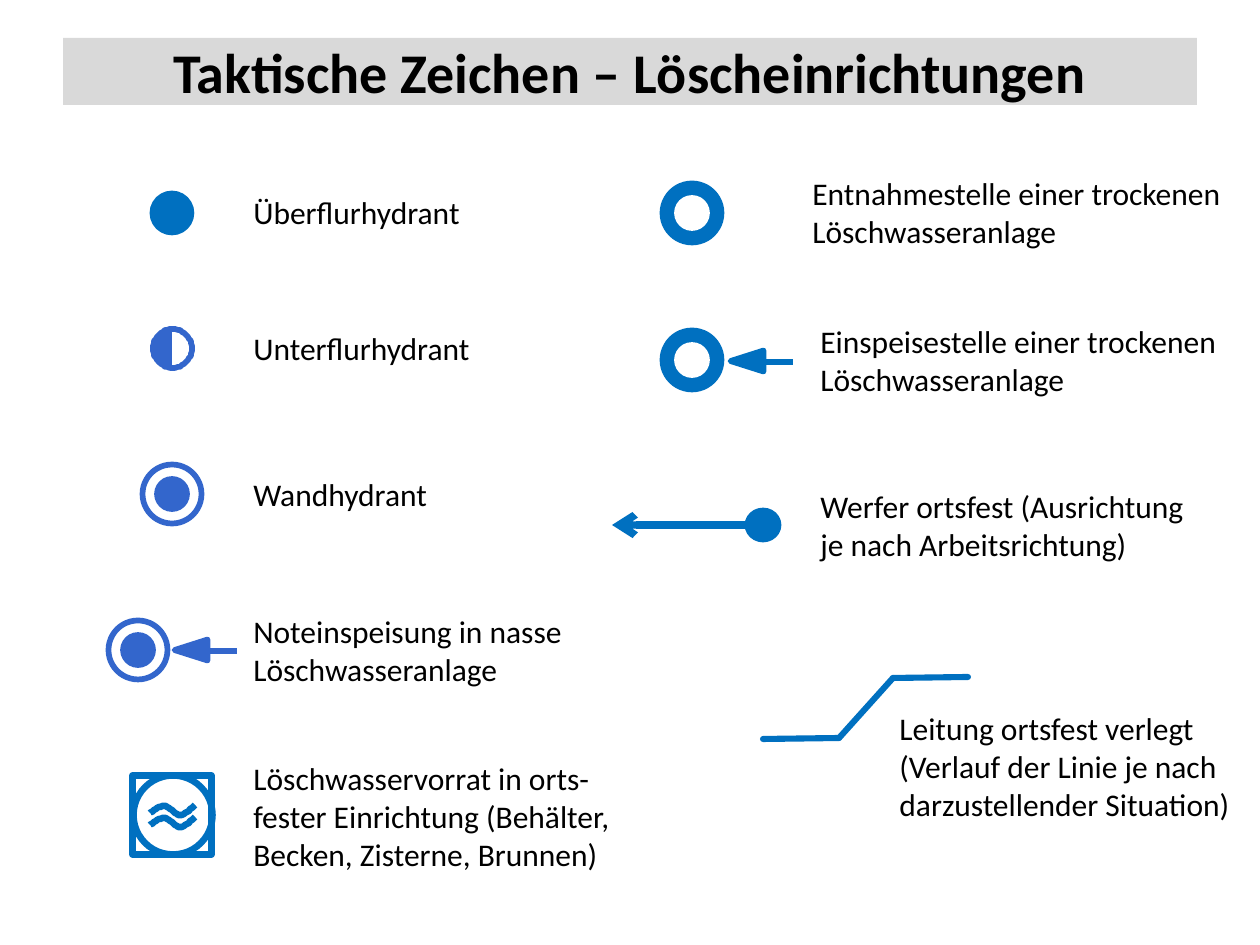
import math
from typing import NamedTuple

from lxml import etree
from pptx import Presentation
from pptx import util as u
from pptx.dml.color import RGBColor
from pptx.enum import shapes, text
from pptx.oxml import ns

SCALE = u.Inches(1) / 126  # EMU per px
HUES = {"sky": "0070C0", "royal": "3366CC", "white": "FFFFFF",
        "grey": "D9D9D9", "black": "000000"}
KIND = shapes.MSO_SHAPE


class Label(NamedTuple):
    words: str
    left: int
    top: int
    width: int


LABELS = [
    Label("Überflurhydrant", 241, 187, 234),
    Label("Unterflurhydrant", 241, 323, 244),
    Label("Wandhydrant", 241, 469, 202),
    Label("Noteinspeisung in nasse\nLöschwasseranlage", 241, 606, 338),
    Label("Löschwasservorrat in orts-\nfester Einrichtung (Behälter,\n"
          "Becken, Zisterne, Brunnen)", 241, 753, 386),
    Label("Entnahmestelle einer trockenen\nLöschwasseranlage", 800, 168, 438),
    Label("Einspeisestelle einer trockenen\nLöschwasseranlage", 808, 316, 426),
    Label("Werfer ortsfest (Ausrichtung\nje nach Arbeitsrichtung)", 808, 481, 393),
    Label("Leitung ortsfest verlegt\n(Verlauf der Linie je nach\n"
          "darzustellender Situation)", 887, 703, 359),
]


def px(*sizes: float) -> list:
    return [u.Emu(round(size * SCALE)) for size in sizes]


def hue(name: str) -> RGBColor:
    return RGBColor.from_string(HUES[name])


def apply(target, values: dict) -> None:
    for key, value in values.items():
        setattr(target, key, value)


def write(frame, words: str, size: int, bold: bool, align) -> None:
    line = frame.paragraphs[0]
    line.text = words
    line.alignment = align
    for run in line.runs:
        apply(run.font, {"name": "Calibri", "size": u.Pt(size), "bold": bold})
        run.font.color.rgb = hue("black")


def paint(shape, fill: str, edge: str, weight: float) -> None:
    shape.shadow.inherit = False
    if fill:
        shape.fill.solid()
        shape.fill.fore_color.rgb = hue(fill)
    else:
        shape.fill.background()
    shape.line.color.rgb = hue(edge)
    shape.line.width = u.Pt(weight)


def stamp(board, kind, mid: tuple, size: tuple, fill: str, edge: str,
          weight: float = 3.25):
    """Draw a preset shape around its middle point."""
    (x, y), (wide, high) = mid, size
    shape = board.add_shape(kind, *px(x - wide / 2, y - high / 2, wide, high))
    paint(shape, fill, edge, weight)
    return shape


def disc(board, mid: tuple, size: int, fill: str, edge: str,
         weight: float = 3.25) -> None:
    stamp(board, KIND.OVAL, mid, (size, size), fill, edge, weight)


def ring(board, mid: tuple, fill: str, edge: str, core: str) -> None:
    disc(board, mid, 59, fill, edge)
    disc(board, mid, 30, core, core)


def link(board, start: tuple, end: tuple, tone: str, weight: float,
         cap: str = "flat", arrow: bool = False) -> None:
    line = board.add_connector(shapes.MSO_CONNECTOR.STRAIGHT, *px(*start, *end))
    line.line.color.rgb = hue(tone)
    line.line.width = u.Pt(weight)
    edge = line.line._get_or_add_ln()
    edge.set("cap", cap)
    if arrow:
        etree.SubElement(edge, ns.qn("a:tailEnd"), type="arrow")
    etree.SubElement(line._element.spPr, ns.qn("a:effectLst"))


def inlet(board, x: int, y: int, tone: str) -> None:
    """Draw a feed arrow that points left, with its head around x, y."""
    link(board, (x + 46, y + 1), (x - 5, y + 1), tone, 3.25)
    head = stamp(board, KIND.ISOSCELES_TRIANGLE, (x, y), (21, 33), tone, tone)
    head.rotation = 270


def trace(board, dots: list, fill: str, edge: str, weight: float) -> None:
    pen = board.build_freeform(*dots[0], scale=SCALE)
    pen.add_line_segments(dots[1:], close=False)
    paint(pen.convert_to_shape(), fill, edge, weight)


def arc(x: float, y: float, size: float, side: int) -> list:
    """Give the points of a half circle; side is -1 for left, 1 for right."""
    turns = [math.pi * step / 24 for step in range(25)]
    return [(x + side * size * math.sin(t), y - size * math.cos(t)) for t in turns]


def curve(knots: list, steps: int = 10) -> list:
    """Give points along joined cubic curves."""
    dots = [knots[0]]
    for first in range(0, len(knots) - 1, 3):
        part = knots[first:first + 4]
        for step in range(1, steps + 1):
            t = step / steps
            mix = [math.comb(3, k) * t**k * (1 - t)**(3 - k) for k in range(4)]
            dots.append(tuple(sum(m * p[axis] for m, p in zip(mix, part))
                              for axis in (0, 1)))
    return dots


def head(slide) -> None:
    title = slide.shapes.title
    left, top, width, height = px(63, 38, 1134, 67)
    apply(title, {"left": left, "top": top, "width": width, "height": height})
    title.fill.solid()
    title.fill.fore_color.rgb = hue("grey")
    apply(title.text_frame, {"vertical_anchor": text.MSO_ANCHOR.MIDDLE,
                             "auto_size": text.MSO_AUTO_SIZE.NONE,
                             "word_wrap": True})
    write(title.text_frame, "Taktische Zeichen – Löscheinrichtungen", 32, True,
          text.PP_ALIGN.CENTER)


def note(board, label: Label) -> None:
    rows = label.words.count("\n") + 1
    box = board.add_textbox(*px(label.left, label.top, label.width, 12 + 38 * rows))
    apply(box.text_frame, {"word_wrap": False,
                           "auto_size": text.MSO_AUTO_SIZE.SHAPE_TO_FIT_TEXT})
    write(box.text_frame, label.words, 18, False, text.PP_ALIGN.LEFT)


def wet(slide) -> None:
    """Draw the signs of the left column."""
    disc(slide.shapes, (172, 213), 39, "sky", "sky")

    under = slide.shapes.add_group_shape().shapes
    for side, fill in ((-1, "royal"), (1, "")):
        trace(under, arc(172.5, 348.5, 19.5, side), fill, "royal", 3.25)

    wall = slide.shapes.add_group_shape().shapes
    ring(wall, (172, 494), "", "royal", "royal")

    feed = slide.shapes.add_group_shape().shapes
    ring(feed, (138, 650), "", "royal", "royal")
    inlet(feed, 191, 650, "royal")

    tank = slide.shapes.add_group_shape().shapes
    disc(tank, (173, 815), 79, "", "sky", 3.75)
    stamp(tank, KIND.RECTANGLE, (172, 815), (79, 79), "", "sky", 3.75)
    wave = [(150, 813), (152, 811), (159, 806), (164, 806), (169, 806),
            (175, 815), (180, 815), (186, 815), (192, 807), (195, 805)]
    for drop in (0, 12):
        trace(tank, curve([(x, y + drop) for x, y in wave]), "", "sky", 3.75)


def dry(slide) -> None:
    """Draw the signs of the right column."""
    outlet = slide.shapes.add_group_shape().shapes
    ring(outlet, (692, 213), "sky", "sky", "white")

    entry = slide.shapes.add_group_shape().shapes
    ring(entry, (692, 360), "sky", "sky", "white")
    inlet(entry, 747, 361, "sky")

    jet = slide.shapes.add_group_shape().shapes
    link(jet, (762, 525), (612, 525), "sky", 4.25, arrow=True)
    stamp(jet, KIND.OVAL, (763, 525), (31, 29), "sky", "sky")

    pipe = slide.shapes.add_group_shape().shapes
    bends = [(763, 739), (839, 738), (893, 678), (968, 677)]
    for start, end in zip(bends, bends[1:]):
        link(pipe, start, end, "sky", 3.5, cap="rnd")


def main() -> None:
    deck = Presentation()
    apply(deck, {"slide_width": u.Inches(10), "slide_height": u.Inches(7.5)})
    slide = deck.slides.add_slide(deck.slide_layouts[5])
    head(slide)
    for label in LABELS:
        note(slide.shapes, label)
    wet(slide)
    dry(slide)
    deck.save("out.pptx")


if __name__ == "__main__":
    main()
